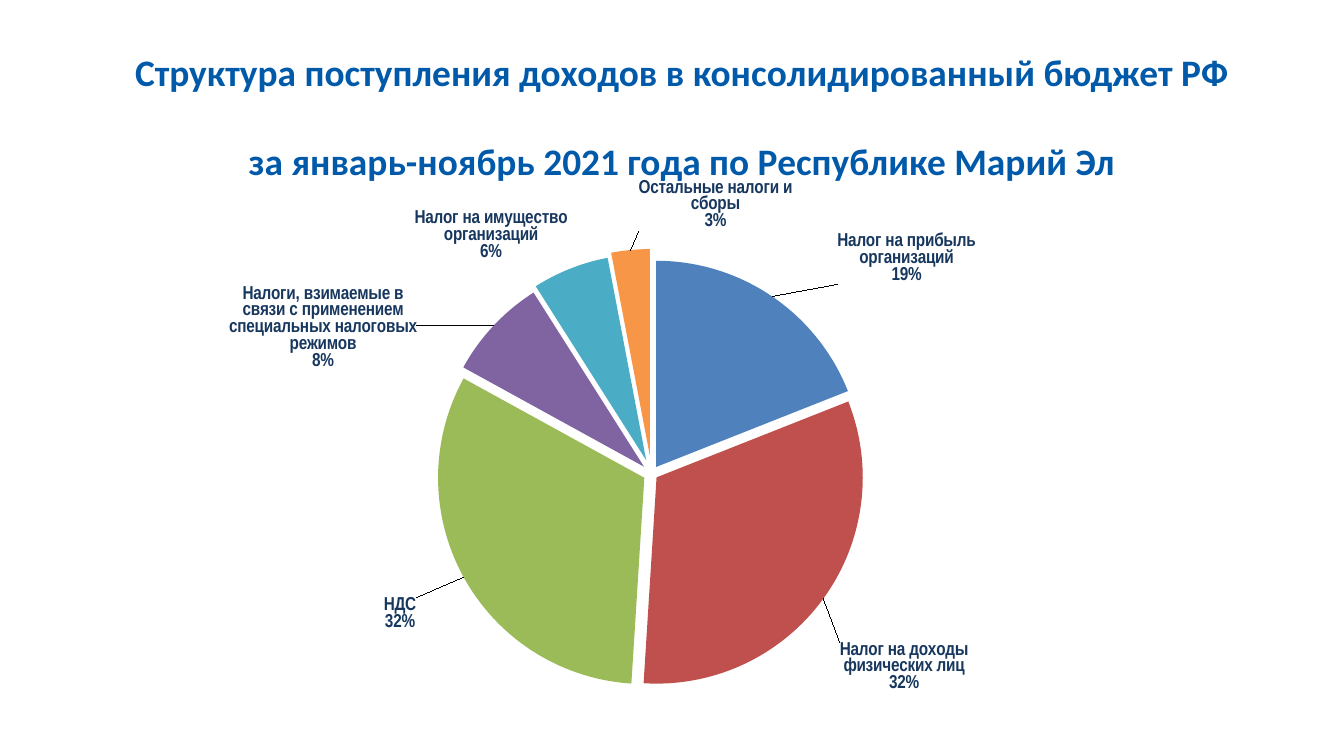
"""Builds a slide with a pie of tax revenue shares."""
from copy import deepcopy
from pptx import Presentation, util as u
from pptx.chart.data import CategoryChartData
from pptx.dml.color import RGBColor
from pptx.enum import chart as ch, text as t
from pptx.oxml import parse_xml
from pptx.oxml.ns import nsdecls, qn

THEME = {"font": "Calibri", "narrow": "Arial Narrow", "title": "005AA9",
         "label": "17375E", "big": 20, "small": 10}
TITLE = ["Структура поступления доходов в консолидированный бюджет РФ",
         "за январь-ноябрь 2021 года по Республике Марий Эл"]
TAXES = [
    ("Налог на прибыль организаций", 19, "4F81BD", 4, (0.06, -0.01)),
    ("Налог на доходы физических лиц", 32, "C0504D", 3, (0.01, 0.07)),
    ("НДС", 32, "9BBB59", 4, (-0.04, 0.03)),
    ("Налоги, взимаемые в связи с применением специальных налоговых режимов",
     8, "8064A2", 5, (-0.07, 0.09)),
    ("Налог на имущество организаций", 6, "4BACC6", 7, None),
    ("Остальные налоги и сборы", 3, "F79646", 9, (0.16, -0.02)),
]
PLOT = {"x": 0.095, "y": 0.069, "w": 0.791, "h": 0.92}


def node(tag, val=None):
    attr = "" if val is None else f' val="{val}"'
    return parse_xml(f'<c:{tag} {nsdecls("c")}{attr}/>')


def layout(pos, **modes):
    item, manual = node("layout"), node("manualLayout")
    for tag, val in {**modes, **pos}.items():
        manual.append(node(tag, val))
    item.append(manual)
    return item


def style(font, name, size, color, bold):
    font.name, font.size, font.bold = name, u.Pt(size), bold
    font.color.rgb = RGBColor.from_string(color)


def add_title(slide):
    box = slide.shapes.title
    box.left, box.top, box.width, box.height = map(u.Inches, (0.9, 0.41, 8.35, 0.91))
    frame = box.text_frame
    frame.word_wrap, frame.auto_size = True, t.MSO_AUTO_SIZE.NONE
    frame.vertical_anchor = t.MSO_ANCHOR.MIDDLE
    frame.margin_left = frame.margin_right = u.Inches(0.05)
    for i, line in enumerate(TITLE):
        para = frame.add_paragraph() if i else frame.paragraphs[0]
        para.alignment = t.PP_ALIGN.CENTER
        para.space_before = u.Pt(23.5 if i else 0)
        run = para.add_run()
        run.text = line
        style(run.font, THEME["font"], THEME["big"], THEME["title"], True)


def add_labels(series):
    labels = series.data_labels
    labels.show_value = False
    labels.show_category_name = labels.show_percentage = True
    labels.number_format, labels.number_format_is_linked = "0%", False
    labels.position = ch.XL_LABEL_POSITION.OUTSIDE_END
    style(labels.font, THEME["narrow"], THEME["small"], THEME["label"], True)
    root = labels._element
    gap = node("separator")
    gap.text = "\n"
    root.find(qn("c:showBubbleSize")).addnext(gap)
    base = [kid for kid in root if kid.tag != qn("c:showLeaderLines")]
    shifts = [(i, tax[4]) for i, tax in enumerate(TAXES) if tax[4]]
    for at, (i, (x, y)) in enumerate(shifts):
        label = node("dLbl")
        label.append(node("idx", i))
        label.append(layout({"x": x, "y": y}))
        for kid in base:
            label.append(deepcopy(kid))
        root.insert(at, label)


def add_pie(slide):
    data = CategoryChartData()
    data.categories = [tax[0] for tax in TAXES]
    data.add_series("Series 1", [tax[1] for tax in TAXES])
    box = map(u.Inches, (1.14, 1.32, 7.56, 4.17))
    chart = slide.shapes.add_chart(ch.XL_CHART_TYPE.PIE, *box, data).chart
    chart.has_title = chart.has_legend = False
    style(chart.font, THEME["font"], THEME["small"], "000000", False)
    plot = chart.plots[0]
    plot.vary_by_categories = True
    series = plot.series[0]
    for i, (_, _, color, _, _) in enumerate(TAXES):
        fill = series.points[i].format.fill
        fill.solid()
        fill.fore_color.rgb = RGBColor.from_string(color)
    slices = series._element.findall(qn("c:dPt"))
    for part, tax in zip(slices, TAXES):
        part.find(qn("c:spPr")).addprevious(node("explosion", tax[3]))
    slices[0].addprevious(node("explosion", 25))
    add_labels(series)
    area = plot._element.getparent()
    for old in area.findall(qn("c:layout")):
        area.remove(old)
    area.insert(0, layout(PLOT, layoutTarget="inner", xMode="edge", yMode="edge"))


def main():
    deck = Presentation()
    deck.slide_width, deck.slide_height = u.Inches(10), u.Inches(10 * 9 / 16)
    slide = deck.slides.add_slide(deck.slide_layouts[5])
    add_title(slide)
    add_pie(slide)
    deck.save("out.pptx")


if __name__ == "__main__":
    main()
